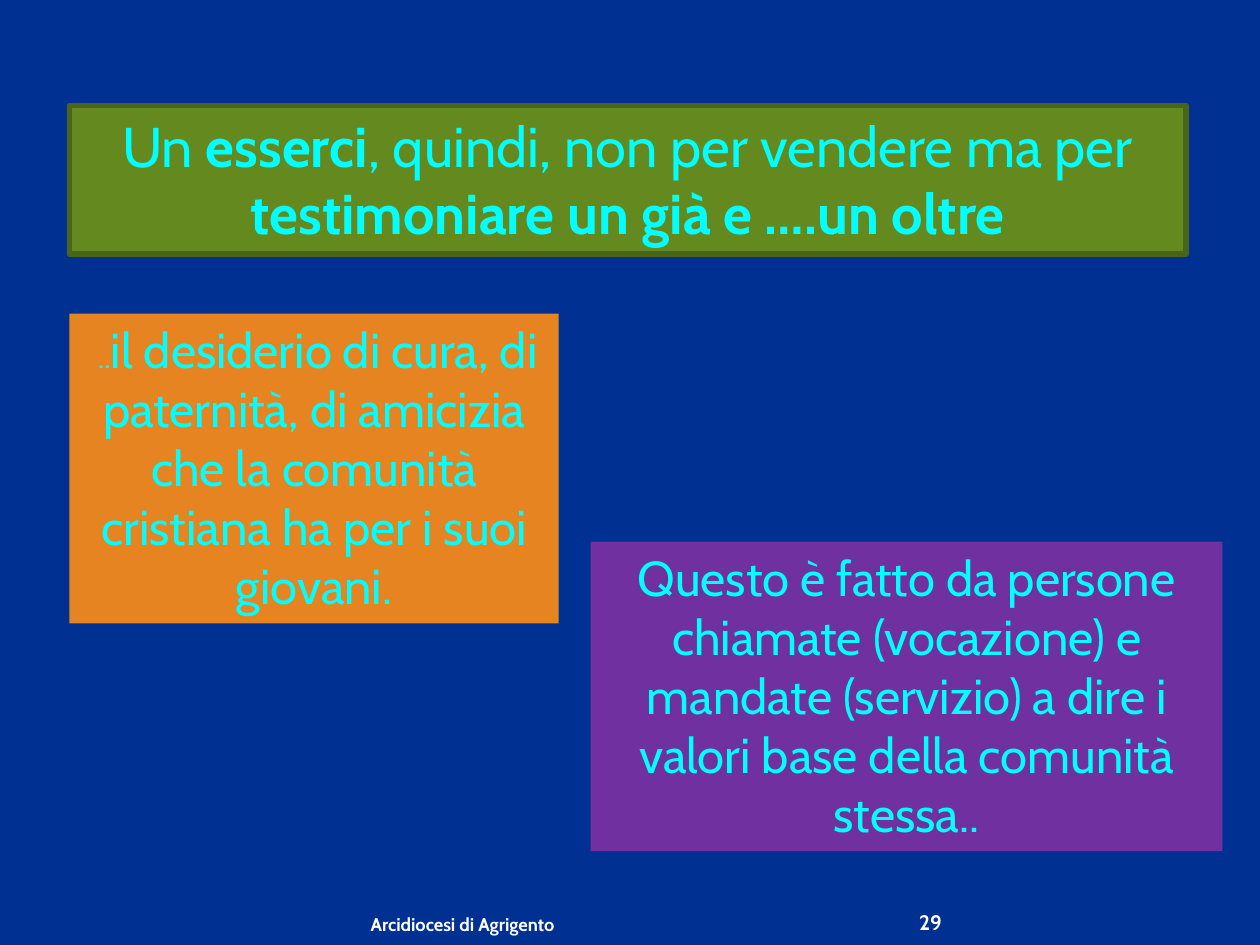
from pptx import Presentation
from pptx.dml.color import RGBColor
from pptx.enum.shapes import MSO_SHAPE as Shape
from pptx.enum.text import MSO_ANCHOR as Anchor, PP_ALIGN as Align
from pptx.util import Pt

FONT = "Cabin"
COLORS = {
    "background": "003192",
    "title": "63891F",
    "title_border": "496517",
    "desire": "E68422",
    "mission": "7030A0",
    "text": "00FFFF",
    "footer": "FFFFFF",
}


def color(name):
    return RGBColor.from_string(COLORS[name])


def write(frame, runs, align, ink):
    """Fill the first paragraph with (text, size, bold) runs."""
    frame.word_wrap = True
    paragraph = frame.paragraphs[0]
    paragraph.alignment = align
    for text, size, bold in runs:
        run = paragraph.add_run()
        run.text = text
        run.font.name = FONT
        run.font.size = Pt(size)
        run.font.bold = bold
        run.font.color.rgb = color(ink)


def add_panel(slide, box, fill, runs, border=None):
    panel = slide.shapes.add_shape(Shape.RECTANGLE, *map(Pt, box))
    panel.shadow.inherit = False
    panel.fill.solid()
    panel.fill.fore_color.rgb = color(fill)
    if border:
        panel.line.color.rgb = color(border)
        panel.line.width = Pt(3.15)
    else:
        panel.line.fill.background()
    panel.text_frame.vertical_anchor = Anchor.TOP
    write(panel.text_frame, runs, Align.CENTER, "text")


def add_footer(slide, left, width, side_inset, text, size):
    footer = slide.shapes.add_textbox(Pt(left), Pt(516.25), Pt(width), Pt(18))
    frame = footer.text_frame
    frame.margin_left = frame.margin_right = Pt(side_inset)
    frame.margin_top = frame.margin_bottom = 0
    frame.vertical_anchor = Anchor.BOTTOM
    write(frame, [(text, size, True)], Align.RIGHT, "footer")


def main():
    deck = Presentation()
    deck.slide_width, deck.slide_height = Pt(720), Pt(540)
    slide = deck.slides.add_slide(deck.slide_layouts[6])
    slide.background.fill.solid()
    slide.background.fill.fore_color.rgb = color("background")

    add_panel(slide, (39.75, 60.25, 638, 85), "title", [
        ("Un ", 32, False),
        ("esserci", 32, True),
        (", quindi, non per vendere ma per ", 32, False),
        ("testimoniare un già e ….un oltre", 32, True),
    ], border="title_border")
    add_panel(slide, (39.75, 179.25, 279.5, 177), "desire", [
        (" ..", 18, False),
        ("il desiderio di cura, di paternità, di amicizia che la comunità "
         "cristiana ha per i suoi giovani.", 28, False),
    ])
    add_panel(slide, (337.5, 309.5, 361, 177), "mission", [
        ("Questo è fatto da persone chiamate (vocazione) e mandate (servizio) "
         "a dire i valori base della comunità stessa..", 28, False),
    ])

    add_footer(slide, 492.25, 46, 0, "29", 12)
    add_footer(slide, 36, 288, 7.2, "Arcidiocesi di Agrigento", 10.5)
    deck.save("out.pptx")


if __name__ == "__main__":
    main()
